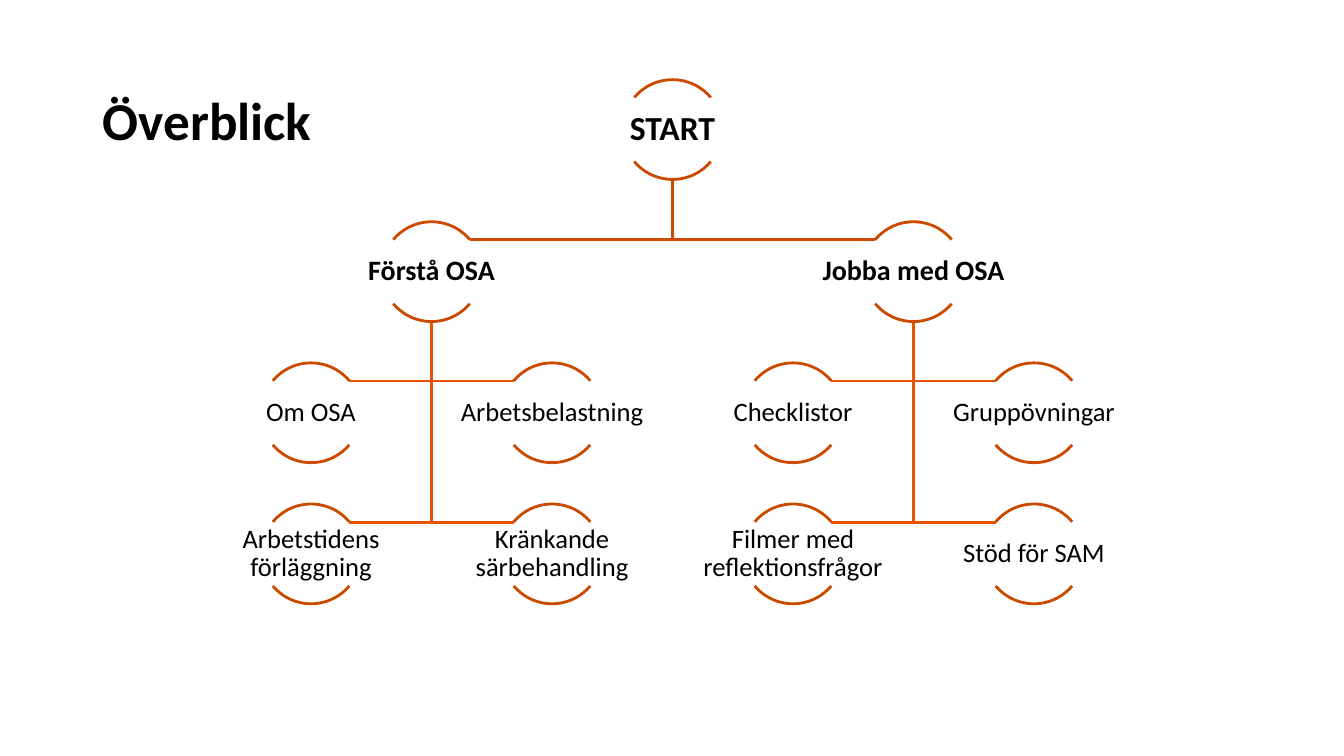
from pptx import Presentation
from pptx.dml.color import RGBColor
from pptx.enum import shapes, text
from pptx.util import Inches, Pt

DIAMETER = 0.99
ARC_DROP = 0.18  # from the top of a circle to the ends of its upper arc
ARC_REACH = 0.38  # from the centre of a circle to the ends of its arcs
LABEL_WIDTH, LABEL_HEIGHT = 1.98, 0.63
ROW_TOPS = [0.79, 2.2, 3.6, 5]
START_X = 6.67
TOPIC_OFFSET, ITEM_OFFSET = 2.39, 1.195
DARK_ORANGE, ORANGE = "CC4A00", "E75300"

TOPICS = [
    ("Förstå OSA", ["Om OSA", "Arbetsbelastning",
                    "Arbetstidens förläggning", "Kränkande särbehandling"]),
    ("Jobba med OSA", ["Checklistor", "Gruppövningar",
                       "Filmer med reflektionsfrågor", "Stöd för SAM"]),
]


def style_line(shape, color):
    """Leave only a 2 pt outline: no fill and no shadow."""
    shape.shadow.inherit = False
    shape.fill.background()
    shape.line.color.rgb = RGBColor.from_string(color)
    shape.line.width = Pt(2)


def add_label(words, left, top, width, height, size, bold, inset):
    frame = slide.shapes.add_textbox(
        Inches(left), Inches(top), Inches(width), Inches(height)).text_frame
    frame.word_wrap = True
    frame.vertical_anchor = text.MSO_ANCHOR.MIDDLE
    frame.margin_left = frame.margin_right = Inches(inset)
    frame.margin_top = frame.margin_bottom = Inches(inset)
    paragraph = frame.paragraphs[0]
    paragraph.text = words
    paragraph.line_spacing = 0.9
    paragraph.font.name = "Calibri"
    paragraph.font.size = Pt(size)
    paragraph.font.bold = bold
    paragraph.font.color.rgb = RGBColor.from_string("000000")
    return paragraph


presentation = Presentation()
presentation.slide_width = Inches(13.33)
presentation.slide_height = Inches(7.5)
slide = presentation.slides.add_slide(presentation.slide_layouts[6])

add_label("Överblick", 0.92, 0.83, 11.5, 0.79, 38, True, 0.1)

# Nodes: words, centre x, row, text size, bold
# Branches: parent x, parent row, child x, child row, colour
nodes = [("START", START_X, 0, 24, True)]
branches = []
for topic_side, (topic, items) in zip((-1, 1), TOPICS):
    topic_x = START_X + topic_side * TOPIC_OFFSET
    nodes.append((topic, topic_x, 1, 20, True))
    branches.append((START_X, 0, topic_x, 1, DARK_ORANGE))
    for index, item in enumerate(items):
        item_x = topic_x + (-1, 1)[index % 2] * ITEM_OFFSET
        row = 2 + index // 2
        nodes.append((item, item_x, row, 19, False))
        branches.append((topic_x, 1, item_x, row, ORANGE))

for parent_x, parent_row, child_x, child_row, color in branches:
    start_y = ROW_TOPS[parent_row] + DIAMETER
    end_y = ROW_TOPS[child_row] + ARC_DROP
    end_x = child_x + (ARC_REACH if child_x < parent_x else -ARC_REACH)
    builder = slide.shapes.build_freeform(Inches(parent_x), Inches(start_y))
    builder.add_line_segments(
        [(Inches(parent_x), Inches(end_y)), (Inches(end_x), Inches(end_y))],
        close=False)
    style_line(builder.convert_to_shape(), color)

for words, center_x, row, size, bold in nodes:
    top = ROW_TOPS[row]
    for start_angle, end_angle in ((132, 192), (24, 84)):
        arc = slide.shapes.add_shape(
            shapes.MSO_SHAPE.ARC, Inches(center_x - DIAMETER / 2), Inches(top),
            Inches(DIAMETER), Inches(DIAMETER))
        arc.adjustments[0] = start_angle
        arc.adjustments[1] = end_angle
        style_line(arc, DARK_ORANGE)
    label = add_label(words, center_x - LABEL_WIDTH / 2, top + ARC_DROP,
                      LABEL_WIDTH, LABEL_HEIGHT, size, bold, 0.01)
    label.alignment = text.PP_ALIGN.CENTER

presentation.save("out.pptx")
